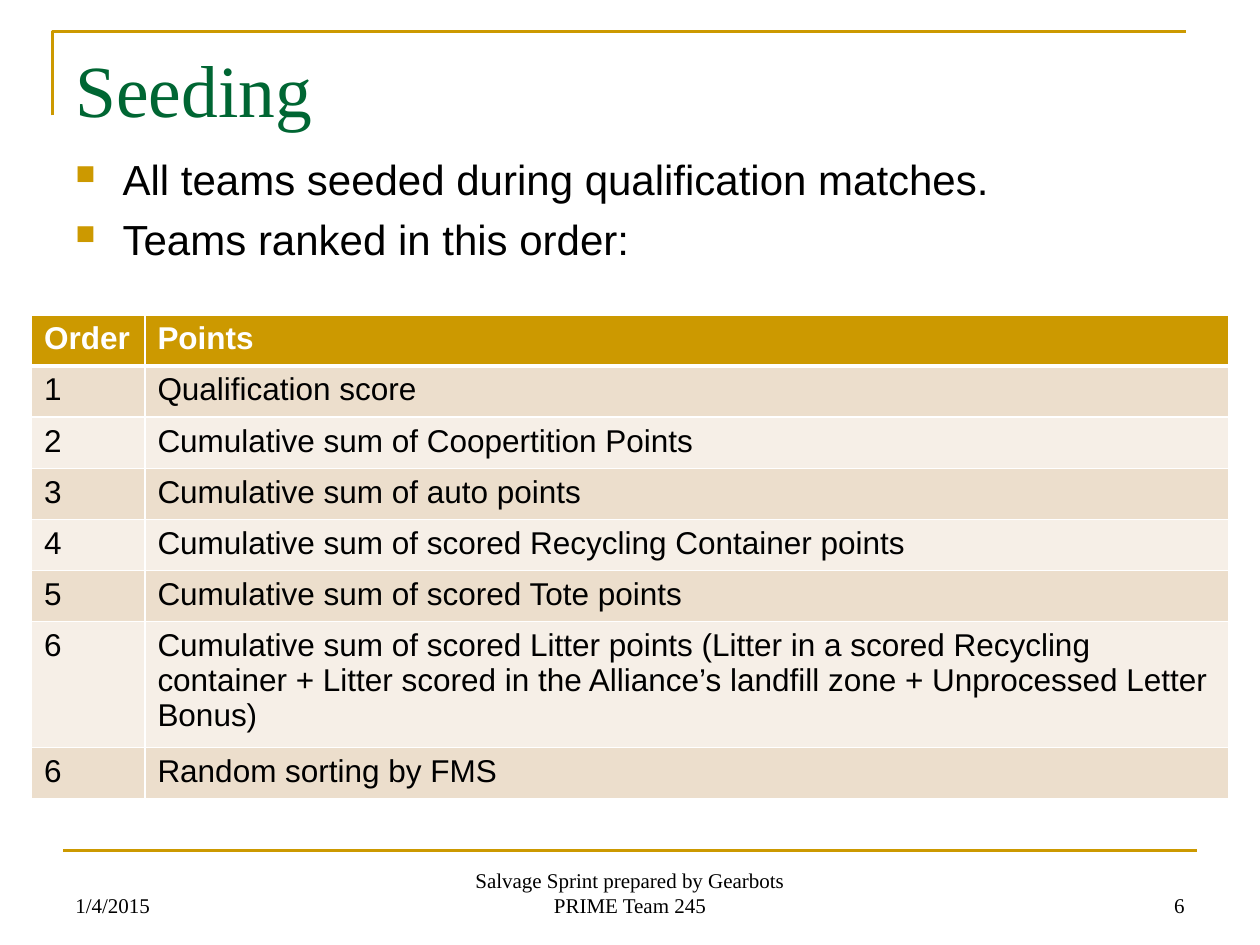
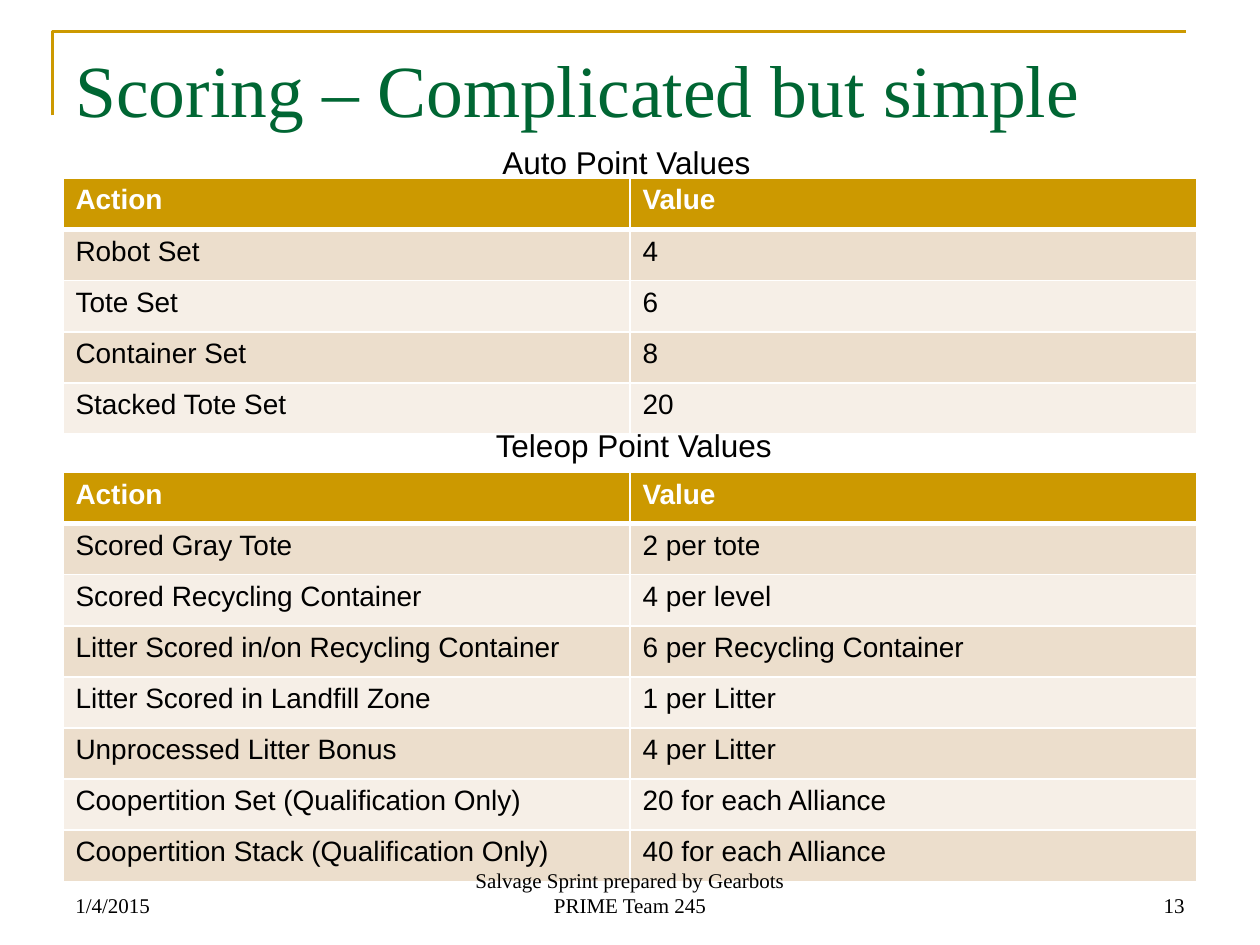
"""Build two slides on seeding and scoring for a robotics tournament."""
import pptx
import pptx.dml.color
import pptx.enum.text
import pptx.oxml
import pptx.oxml.ns
import pptx.util

Pt = pptx.util.Pt
RGB = pptx.dml.color.RGBColor.from_string
ALIGN = pptx.enum.text.PP_ALIGN
ANCHOR = pptx.enum.text.MSO_ANCHOR
NS = pptx.oxml.ns.nsdecls("a")

COLORS = {
    "gold": "CC9900",
    "green": "006633",
    "black": "000000",
    "white": "FFFFFF",
    "band_dark": "ECDECC",
    "band_light": "F6EFE7",
}
SERIF = "Times New Roman"
SANS = "Arial"
DATE = "1/4/2015"
CREDIT = "Salvage Sprint prepared by Gearbots PRIME Team 245"
ROW_HEIGHT = 29.2

SEEDING = [
    ("Order", "Points"),
    ("1", "Qualification score"),
    ("2", "Cumulative sum of Coopertition Points"),
    ("3", "Cumulative sum of auto points"),
    ("4", "Cumulative sum of scored Recycling Container points"),
    ("5", "Cumulative sum of scored Tote points"),
    ("6", "Cumulative sum of scored Litter points (Litter in a scored Recycling "
          "container + Litter scored in the Alliance’s landfill zone + "
          "Unprocessed Letter Bonus)"),
    ("6", "Random sorting by FMS"),
]
AUTO = [
    ("Action", "Value"),
    ("Robot Set", "4"),
    ("Tote Set", "6"),
    ("Container Set", "8"),
    ("Stacked Tote Set", "20"),
]
TELEOP = [
    ("Action", "Value"),
    ("Scored Gray Tote", "2 per tote"),
    ("Scored Recycling Container", "4 per level"),
    ("Litter Scored in/on Recycling Container", "6 per Recycling Container"),
    ("Litter Scored in Landfill Zone", "1 per Litter"),
    ("Unprocessed Litter Bonus", "4 per Litter"),
    ("Coopertition Set (Qualification Only)", "20 for each Alliance"),
    ("Coopertition Stack (Qualification Only)", "40 for each Alliance"),
]


def write(p, text, size=18, font=SANS, color="black", bold=False, align=ALIGN.LEFT):
    p.alignment = align
    r = p.add_run()
    r.text = text
    r.font.size = Pt(size)
    r.font.name = font
    r.font.bold = bold
    r.font.color.rgb = RGB(COLORS[color])


class Deck:
    def __init__(self):
        self.prs = pptx.Presentation()
        self.prs.slide_width, self.prs.slide_height = Pt(720), Pt(540)
        self.s = None

    def slide(self, title):
        self.s = self.prs.slides.add_slide(self.prs.slide_layouts[6])
        self.corner()
        self.rule()
        self.text(title, 36, 21.6, 648, 90, size=42, font=SERIF, color="green")

    def corner(self):
        fb = self.s.shapes.build_freeform(Pt(30), Pt(66))
        fb.add_line_segments([(Pt(30), Pt(18)), (Pt(678), Pt(18))], close=False)
        sp = fb.convert_to_shape()
        sp.shadow.inherit = False
        sp.fill.background()
        self.stroke(sp)

    def rule(self):
        cx = self.s.shapes.add_connector(
            pptx.enum.shapes.MSO_CONNECTOR.STRAIGHT, Pt(36), Pt(486), Pt(684), Pt(486))
        cx._element.spPr.append(pptx.oxml.parse_xml(f"<a:effectLst {NS}/>"))
        self.stroke(cx)

    def stroke(self, sp):
        sp.line.color.rgb = RGB(COLORS["gold"])
        sp.line.width = Pt(1.5)

    def frame(self, x, y, w, h, wrap=True, anchor=ANCHOR.TOP):
        tf = self.s.shapes.add_textbox(Pt(x), Pt(y), Pt(w), Pt(h)).text_frame
        tf.word_wrap = wrap
        tf.vertical_anchor = anchor
        return tf

    def text(self, text, x, y, w, h, wrap=True, anchor=ANCHOR.TOP, **fmt):
        write(self.frame(x, y, w, h, wrap, anchor).paragraphs[0], text, **fmt)

    def caption(self, text, x, y, w):
        self.text(text, x, y, w, 29, wrap=False)

    def bullets(self, items, x, y, w, h):
        tf = self.frame(x, y, w, h)
        for i, item in enumerate(items):
            p = tf.add_paragraph() if i else tf.paragraphs[0]
            if i:
                p.space_before = Pt(5.5)
            pPr = p._p.get_or_add_pPr()
            pPr.set("marL", str(Pt(27)))
            pPr.set("indent", str(-Pt(27)))
            for xml in (
                f'<a:buClr {NS}><a:srgbClr val="{COLORS["gold"]}"/></a:buClr>',
                f'<a:buSzPct {NS} val="65000"/>',
                f'<a:buChar {NS} char="■"/>',
            ):
                pPr.append(pptx.oxml.parse_xml(xml))
            write(p, item, size=24)

    def table(self, rows, x, y, widths, size):
        tbl = self.s.shapes.add_table(
            len(rows), len(widths), Pt(x), Pt(y),
            Pt(sum(widths)), Pt(ROW_HEIGHT * len(rows))).table
        for col, width in zip(tbl.columns, widths):
            col.width = Pt(width)
        for i, row in enumerate(rows):
            tbl.rows[i].height = Pt(ROW_HEIGHT)
            header = i == 0
            fill = "gold" if header else "band_dark" if i % 2 else "band_light"
            for j, value in enumerate(row):
                cell = tbl.cell(i, j)
                self.borders(cell, top=3 if i == 1 else 1, bottom=3 if header else 1)
                cell.fill.solid()
                cell.fill.fore_color.rgb = RGB(COLORS[fill])
                write(cell.text_frame.paragraphs[0], value, size=size,
                      color="white" if header else "black", bold=header)

    def borders(self, cell, top, bottom):
        tcPr = cell._tc.get_or_add_tcPr()
        for side, width in (("L", 1), ("R", 1), ("T", top), ("B", bottom)):
            tcPr.append(pptx.oxml.parse_xml(
                f'<a:ln{side} {NS} w="{Pt(width)}"><a:solidFill>'
                f'<a:srgbClr val="{COLORS["white"]}"/></a:solidFill></a:ln{side}>'))

    def footer(self, number):
        for text, x, w, align in (
            (DATE, 36, 168, ALIGN.LEFT),
            (CREDIT, 246, 228, ALIGN.CENTER),
            (str(number), 516, 168, ALIGN.RIGHT),
        ):
            self.text(text, x, 492, w, 36, anchor=ANCHOR.BOTTOM,
                      size=12, font=SERIF, align=align)


def main():
    deck = Deck()

    deck.slide("Seeding")
    deck.bullets(["All teams seeded during qualification matches.",
                  "Teams ranked in this order:"], 36, 84, 684, 90)
    deck.table(SEEDING, 18, 180, (64.8, 619.2), size=18)
    deck.footer(6)

    deck.slide("Scoring – Complicated but simple")
    deck.table(AUTO, 36, 102, (324, 324), size=16)
    deck.table(TELEOP, 36, 270, (324, 324), size=16)
    deck.caption("Auto Point Values", 280, 78, 157.7)
    deck.caption("Teleop Point Values", 276.2, 240, 173.5)
    deck.footer(13)

    deck.prs.save("out.pptx")


if __name__ == "__main__":
    import pptx.enum.shapes
    main()
